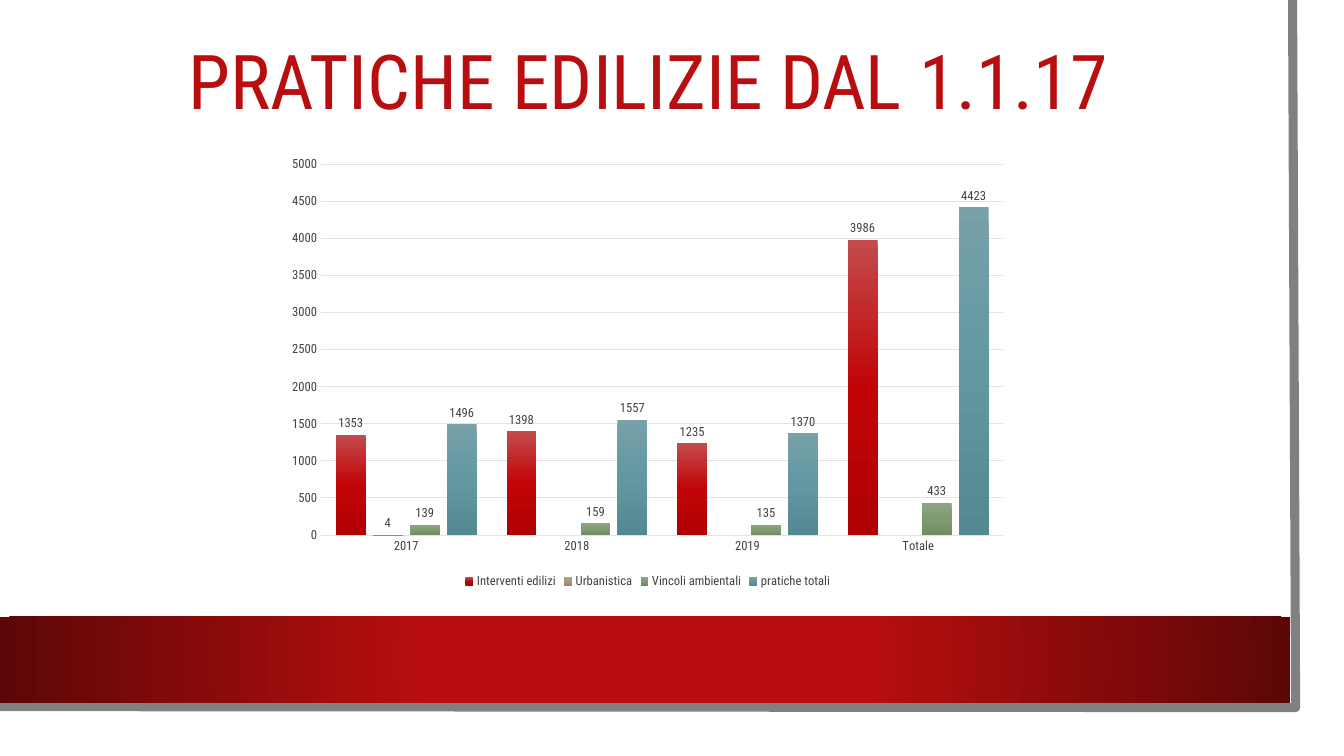
"""Build the slide on building permit files since 1.1.17 with a clustered column chart."""
from lxml import etree
from pptx import Presentation
from pptx.chart.data import CategoryChartData
from pptx.dml.color import RGBColor
from pptx.enum import chart as charts, shapes, text
from pptx.oxml import ns
from pptx.util import Inches, Pt

rgb = RGBColor.from_string
RED, GREY, RULE = "B80E0F", "808080", "E3E3E3"
DOWNWARD = '<a:lin ang="5400000" scaled="0"/>'
OUTWARD = '<a:path path="circle"><a:fillToRect l="50000" t="50000" r="50000" b="50000"/></a:path>'


def write(holder, content=None, size=9, colour="424242", face="Roboto Condensed"):
    if content:
        holder.text = content
    holder.font.size = Pt(size)
    holder.font.name = face
    holder.font.color.rgb = rgb(colour)


def shade(fill, properties, stops, direction):
    fill.solid()
    marks = "".join(f'<a:gs pos="{place * 1000}"><a:srgbClr val="{colour}"/></a:gs>'
                    for place, colour in stops)
    gradient = etree.fromstring(f'<a:gradFill {ns.nsdecls("a")} rotWithShape="1">'
                                f'<a:gsLst>{marks}</a:gsLst>{direction}</a:gradFill>')
    properties.replace(properties.find(ns.qn("a:solidFill")), gradient)


deck = Presentation()
deck.slide_width, deck.slide_height = Inches(13.33), Inches(7.5)
slide = deck.slides.add_slide(deck.slide_layouts[5])

page = slide.shapes.add_shape(shapes.MSO_SHAPE.RECTANGLE, 0, 0, Inches(13.1), Inches(7.27))
page.fill.solid()
page.fill.fore_color.rgb = rgb("FFFFFF")
page.line.fill.background()
page.shadow.inherit = False

outline = slide.shapes.build_freeform(Inches(12.82), 0)
outline.add_line_segments([(Inches(12.85), Inches(7.02)), (Inches(-0.03), Inches(7.01))], close=False)
edge = outline.convert_to_shape()
edge.fill.background()
edge.line.color.rgb = rgb(GREY)
edge.line.width = Pt(6.5)
edge.shadow.inherit = False

band = slide.shapes.add_shape(
    shapes.MSO_SHAPE.RECTANGLE, 0, Inches(6.12), Inches(12.8), Inches(0.85))
shade(band.fill, band._element.spPr, [(34, RED), (100, "5C0707")], OUTWARD)
band.line.fill.background()
band.shadow.inherit = False

heading = slide.shapes.title
slide.shapes._spTree.append(heading._element)
heading.left, heading.top = Inches(0.75), Inches(0.21)
heading.width, heading.height = Inches(11.37), Inches(1.26)
heading.text_frame.word_wrap = True
heading.text_frame.auto_size = text.MSO_AUTO_SIZE.NONE
heading.text_frame.vertical_anchor = text.MSO_ANCHOR.MIDDLE
heading_line = heading.text_frame.paragraphs[0]
heading_line.alignment = text.PP_ALIGN.CENTER
heading_line.line_spacing = 0.9
write(heading_line.add_run(), "PRATICHE EDILIZIE DAL 1.1.17", size=54, colour=RED)

practices = [
    ("Interventi edilizi", (1353, 1398, 1235, 3986), ("C34B4C", "C10507", "B00001")),
    ("Urbanistica", (4, None, None, None), ("B0A38C", "A8997B", "98886B")),
    ("Vincoli ambientali", (139, 159, 135, 433), ("8EA582", "7E9C6F", "708D60")),
    ("pratiche totali", (1496, 1557, 1370, 4423), ("78A1A9", "6198A2", "538993")),
]
counts = CategoryChartData()
counts.categories = ["2017", "2018", "2019", "Totale"]
for name, values, _ in practices:
    counts.add_series(name, values)

chart = slide.shapes.add_chart(
    charts.XL_CHART_TYPE.COLUMN_CLUSTERED,
    Inches(2.75), Inches(1.47), Inches(7.35), Inches(4.41), counts).chart
write(chart, size=10, colour="000000")
chart.has_title = False
chart.has_legend = True
chart.legend.position = charts.XL_LEGEND_POSITION.BOTTOM
chart.legend.include_in_layout = False
write(chart.legend)

years, amounts = chart.category_axis, chart.value_axis
for axis in (years, amounts):
    axis.major_tick_mark = axis.minor_tick_mark = charts.XL_TICK_MARK.NONE
    write(axis.tick_labels)
amounts.minimum_scale, amounts.maximum_scale, amounts.major_unit = 0, 5000, 500
amounts.format.line.fill.background()
for rule in (years.format.line, amounts.major_gridlines.format.line):
    rule.color.rgb = rgb(RULE)
    rule.width = Pt(0.75)

columns = chart.plots[0]
columns.vary_by_categories = False
columns.gap_width, columns.overlap = 100, -24
for series, (_, _, tones) in zip(columns.series, practices):
    shade(series.format.fill, series._element.get_or_add_spPr(), zip((0, 50, 100), tones), DOWNWARD)
    series.invert_if_negative = False
    series.data_labels.show_value = True
    series.data_labels.position = charts.XL_LABEL_POSITION.OUTSIDE_END
    write(series.data_labels)

deck.save("out.pptx")
